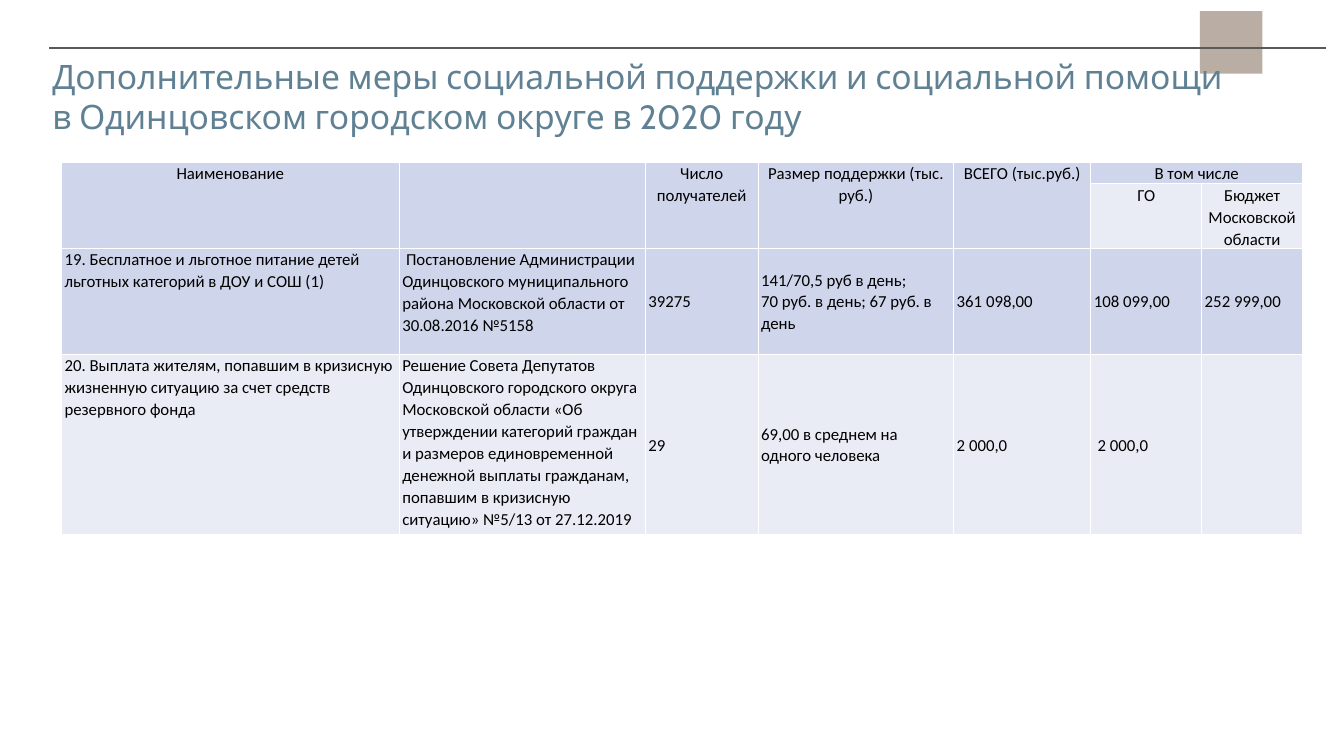
from dataclasses import dataclass

from lxml.etree import SubElement
from pptx import Presentation
from pptx.dml.color import RGBColor
from pptx.enum.shapes import MSO_CONNECTOR, MSO_SHAPE
from pptx.enum.text import MSO_ANCHOR, PP_ALIGN
from pptx.oxml.ns import qn
from pptx.slide import Slide
from pptx.table import Table, _Cell
from pptx.util import Emu, Pt

EMU_PER_PX = 9144


@dataclass(frozen=True)
class Theme:
    title_font: str = "Cabin"
    table_font: str = "Calibri"
    title_size: int = 24
    table_size: int = 12
    title: str = "608194"
    text: str = "000000"
    accent: str = "BAADA4"
    rule: str = "595959"
    border: str = "FFFFFF"
    dark_band: str = "CFD5EA"
    light_band: str = "E9EBF5"


@dataclass(frozen=True)
class CellSpec:
    row: int
    column: int
    text: str
    rows: int = 1
    columns: int = 1


THEME = Theme()
TITLE = (
    "Дополнительные меры социальной поддержки и социальной помощи\n"
    "в Одинцовском городском округе в 2020 году"
)
COLUMN_WIDTHS = (335, 244, 112, 194, 136, 110, 100)
ROW_HEIGHTS = (21, 63, 105, 179)
ROW_FILLS = (THEME.dark_band, THEME.light_band, THEME.dark_band, THEME.light_band)
HEADER_ROWS = 2
FIRST_VALUE_COLUMN = 2

TALL_HEADERS = (
    "Наименование",
    "",
    "Число получателей",
    "Размер поддержки (тыс. руб.)",
    "ВСЕГО (тыс.руб.)",
)
MEASURES = (
    (
        "19. Бесплатное и льготное питание детей льготных категорий в ДОУ и СОШ (1)",
        " Постановление Администрации Одинцовского муниципального района "
        "Московской области от 30.08.2016 №5158",
        "39275",
        "141/70,5 руб в день;\n70 руб. в день; 67 руб. в день",
        "361 098,00",
        "108 099,00",
        "252 999,00",
    ),
    (
        "20. Выплата жителям, попавшим в кризисную жизненную ситуацию "
        "за счет средств резервного фонда",
        "Решение Совета Депутатов Одинцовского городского округа Московской области "
        "«Об утверждении категорий граждан и размеров единовременной денежной выплаты "
        "гражданам, попавшим в кризисную ситуацию» №5/13 от 27.12.2019",
        "29",
        "69,00 в среднем на одного человека",
        "2 000,0",
        " 2 000,0",
        "",
    ),
)
CELLS = [
    *(CellSpec(0, column, text, rows=2) for column, text in enumerate(TALL_HEADERS)),
    CellSpec(0, 5, "В том числе", columns=2),
    CellSpec(1, 5, "ГО"),
    CellSpec(1, 6, "Бюджет Московской области"),
    *(
        CellSpec(row, column, text)
        for row, measure in enumerate(MEASURES, HEADER_ROWS)
        for column, text in enumerate(measure)
    ),
]


def px(length: int) -> Emu:
    return Emu(length * EMU_PER_PX)


def rgb(color: str) -> RGBColor:
    return RGBColor.from_string(color)


def add_accent(page: Slide) -> None:
    square = page.shapes.add_shape(MSO_SHAPE.RECTANGLE, px(1190), px(11), px(62), px(62))
    square.shadow.inherit = False
    square.fill.solid()
    square.fill.fore_color.rgb = rgb(THEME.accent)
    square.line.fill.background()


def add_title(page: Slide) -> None:
    box = page.shapes.add_textbox(px(42), px(69), px(1192), px(53))
    frame = box.text_frame
    frame.word_wrap = True
    frame.vertical_anchor = MSO_ANCHOR.MIDDLE
    frame.text = TITLE
    for para in frame.paragraphs:
        for span in para.runs:
            span.font.name = THEME.title_font
            span.font.size = Pt(THEME.title_size)
            span.font.color.rgb = rgb(THEME.title)


def add_rule(page: Slide) -> None:
    rule = page.shapes.add_connector(
        MSO_CONNECTOR.STRAIGHT, px(49), px(48), px(1315), px(48)
    )
    rule.line.color.rgb = rgb(THEME.rule)
    rule.line.width = Pt(1.5)
    SubElement(rule._element.spPr, qn("a:effectLst"))


def style_cell(cell: _Cell, fill: str) -> None:
    cell.margin_left = cell.margin_right = px(3)
    cell.margin_top = cell.margin_bottom = 0
    properties = cell._tc.get_or_add_tcPr()
    for side in ("a:lnL", "a:lnR", "a:lnT", "a:lnB"):
        line = SubElement(properties, qn(side), w=str(Pt(1)))
        solid = SubElement(line, qn("a:solidFill"))
        SubElement(solid, qn("a:srgbClr"), val=THEME.border)
    cell.fill.solid()
    cell.fill.fore_color.rgb = rgb(fill)
    end_size = str(THEME.table_size * 100)
    SubElement(cell.text_frame.paragraphs[0]._p, qn("a:endParaRPr"), sz=end_size)


def fill_cell(table: Table, spec: CellSpec) -> None:
    cell = table.cell(spec.row, spec.column)
    if spec.rows > 1 or spec.columns > 1:
        cell.merge(
            table.cell(spec.row + spec.rows - 1, spec.column + spec.columns - 1)
        )
    if not spec.text:
        return
    is_header = spec.row < HEADER_ROWS
    is_value = not is_header and spec.column >= FIRST_VALUE_COLUMN
    cell.vertical_anchor = MSO_ANCHOR.MIDDLE if is_value else MSO_ANCHOR.TOP
    cell.text_frame.text = spec.text
    for para in cell.text_frame.paragraphs:
        para.alignment = PP_ALIGN.CENTER if is_header else PP_ALIGN.LEFT
        para.line_spacing = 1.07
        for span in para.runs:
            span.font.name = THEME.table_font
            span.font.size = Pt(THEME.table_size)
            span.font.color.rgb = rgb(THEME.text)


def add_measures_table(page: Slide) -> None:
    table = page.shapes.add_table(
        len(ROW_HEIGHTS), len(COLUMN_WIDTHS), px(61), px(161),
        px(sum(COLUMN_WIDTHS)), px(sum(ROW_HEIGHTS)),
    ).table
    table.first_row = False
    table.horz_banding = False
    for column, width in zip(table.columns, COLUMN_WIDTHS):
        column.width = px(width)
    for row, height, fill in zip(table.rows, ROW_HEIGHTS, ROW_FILLS):
        row.height = px(height)
        for cell in row.cells:
            style_cell(cell, fill)
    for spec in CELLS:
        fill_cell(table, spec)


def main() -> None:
    deck = Presentation()
    deck.slide_width = px(1333)
    deck.slide_height = px(750)
    page = deck.slides.add_slide(deck.slide_layouts[6])
    add_accent(page)
    add_title(page)
    add_rule(page)
    add_measures_table(page)
    deck.save("out.pptx")


if __name__ == "__main__":
    main()
